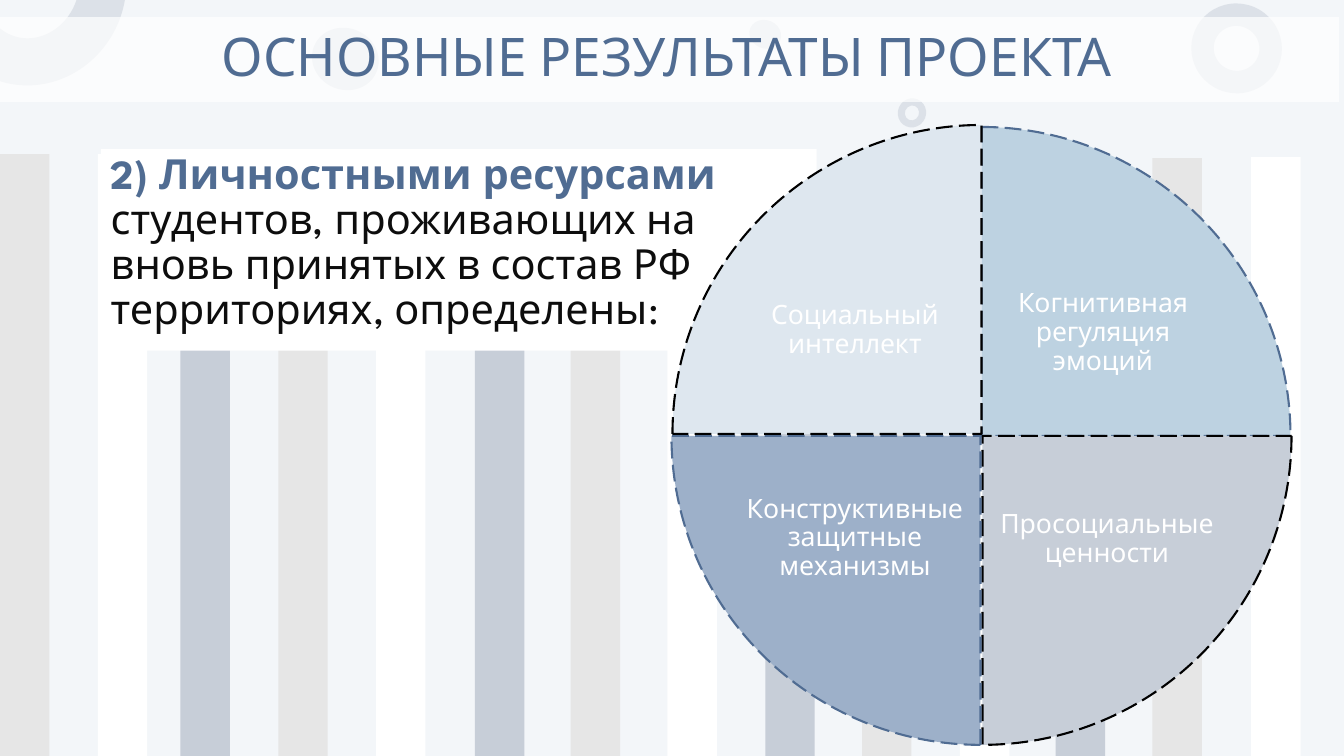
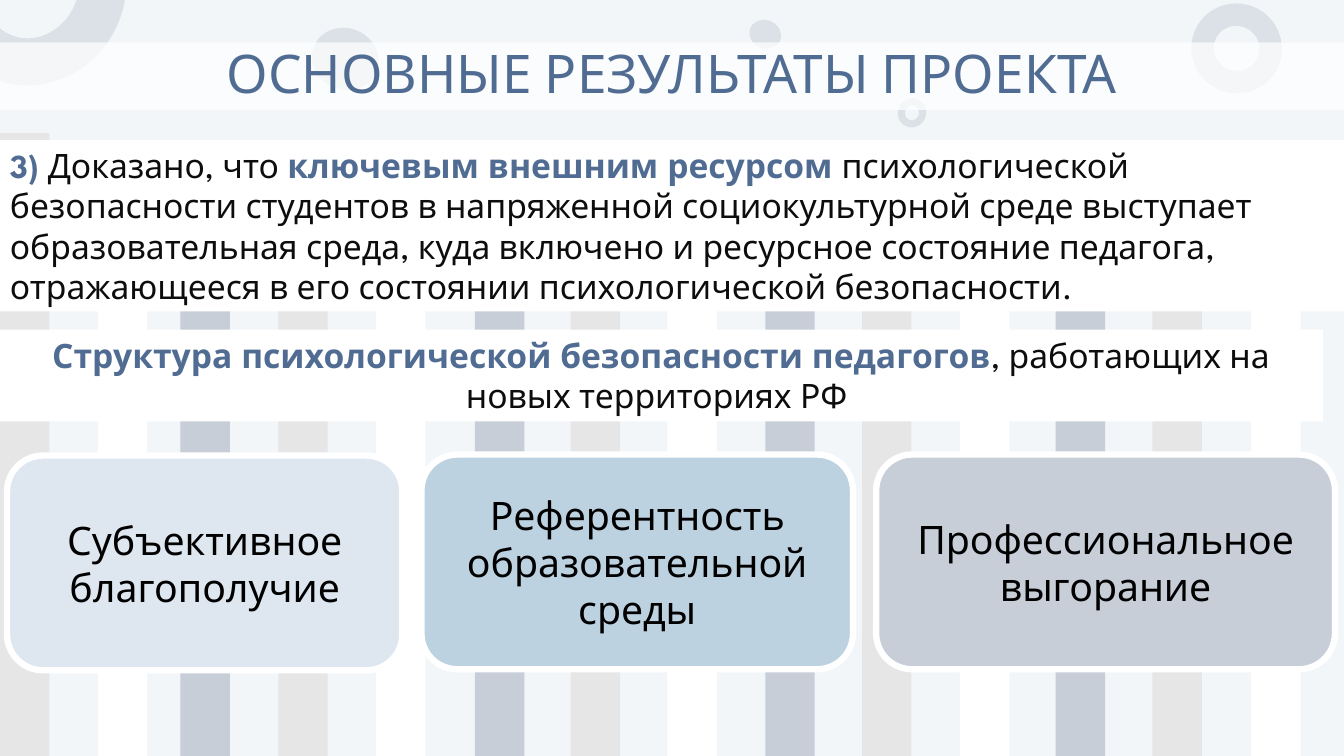
"""Build two slides on the main results of the project."""
from lxml.etree import SubElement
from pptx import Presentation
from pptx.dml.color import RGBColor
from pptx.enum.dml import MSO_LINE
from pptx.enum.shapes import MSO_SHAPE
from pptx.enum.text import MSO_ANCHOR, MSO_AUTO_SIZE, PP_ALIGN
from pptx.oxml.ns import qn
from pptx.util import Inches, Pt

COLORS = {
    "back": "F3F6F9",
    "white": "FFFFFF",
    "gray": "E6E6E6",
    "steel": "C7CED8",
    "pale": "DEE7EF",
    "sky": "BDD2E1",
    "blue": "9DB0C9",
    "accent": "506C92",
    "text": "0D0D0D",
    "black": "000000",
}
HEAD_FONT, BODY_FONT = "Karla", "League Spartan"
TITLE = "ОСНОВНЫЕ РЕЗУЛЬТАТЫ ПРОЕКТА"
WIDTH, HEIGHT = 13.33, 7.5

STRIPE_LEFTS = [0, 0.97, 1.79, 2.76, 3.73, 4.71, 5.66,
                6.62, 7.59, 8.55, 9.52, 10.47, 11.43, 12.41]
STRIPE_COLORS = ["gray", "white", "steel"]
STRIPE_WIDTH = 0.49
RINGS = [
    (MSO_SHAPE.DONUT, (11.82, 0.03, 0.89, 0.9)),
    (MSO_SHAPE.OVAL, (3.12, 0.25, 0.61, 0.67)),
    (MSO_SHAPE.DONUT, (-0.68, -1.07, 1.98, 1.87)),
    (MSO_SHAPE.OVAL, (7.45, 0.18, 0.28, 0.32)),
    (MSO_SHAPE.DONUT, (8.9, 0.98, 0.29, 0.28)),
]


def rgb(name):
    return RGBColor.from_string(COLORS[name])


class Deck:
    def __init__(self):
        self.prs = Presentation()
        self.prs.slide_width = Inches(WIDTH)
        self.prs.slide_height = Inches(HEIGHT)
        self.s = None

    def slide(self, title_box, stripe_tops):
        self.s = self.prs.slides.add_slide(self.prs.slide_layouts[5])
        fill = self.s.background.fill
        fill.solid()
        fill.fore_color.rgb = rgb("back")
        for i, (left, top) in enumerate(zip(STRIPE_LEFTS, stripe_tops)):
            color = STRIPE_COLORS[i % len(STRIPE_COLORS)]
            self.shape((left, top, STRIPE_WIDTH, HEIGHT - top), color)
        for kind, box in RINGS:
            self.shape(box, "steel", kind, alpha=51).rotation = 292.8
        self.title(title_box)

    def title(self, box):
        sp = self.s.shapes.title
        self.s.shapes.element.append(sp.element)
        sp.left, sp.top, sp.width, sp.height = map(Inches, box)
        self.paint(sp, "white", 70)
        self.set_text(sp, [(TITLE, "accent", False)], 38, font=HEAD_FONT, spacing=0.9)

    def paint(self, sp, color, alpha=None):
        sp.fill.solid()
        sp.fill.fore_color.rgb = rgb(color)
        if alpha:
            clr = sp.element.spPr.find(".//" + qn("a:srgbClr"))
            SubElement(clr, qn("a:alpha"), val=str(alpha * 1000))

    def shape(self, box, color, kind=MSO_SHAPE.RECTANGLE, line=None,
              line_width=1.5, alpha=None):
        sp = self.s.shapes.add_shape(kind, *map(Inches, box))
        sp.shadow.inherit = False
        self.paint(sp, color, alpha)
        if line:
            sp.line.color.rgb = rgb(line)
            sp.line.width = Pt(line_width)
        else:
            sp.line.fill.background()
        return sp

    def set_text(self, sp, runs, size, font=BODY_FONT, align=PP_ALIGN.CENTER,
                 anchor=MSO_ANCHOR.MIDDLE, spacing=1.0, before=0):
        tf = sp.text_frame
        tf.word_wrap = True
        tf.auto_size = MSO_AUTO_SIZE.NONE
        tf.vertical_anchor = anchor
        p = tf.paragraphs[0]
        p.alignment = align
        p.line_spacing = spacing
        p.space_before = Pt(before)
        p.font.name = font
        p.font.size = Pt(size)
        for text, color, bold in runs:
            r = p.add_run()
            r.text = text
            r.font.bold = bold
            r.font.color.rgb = rgb(color)

    def panel(self, box, runs, size, **style):
        sp = self.shape(box, "white")
        self.set_text(sp, runs, size, anchor=MSO_ANCHOR.TOP, **style)

    def sector(self, box, start, color, line):
        sp = self.shape(box, color, MSO_SHAPE.PIE, line)
        sp.line.dash_style = MSO_LINE.LONG_DASH
        sp.adjustments[0] = start
        sp.adjustments[1] = (start + 54) % 216

    def label(self, box, text):
        sp = self.s.shapes.add_textbox(*map(Inches, box))
        tf = sp.text_frame
        tf.margin_left = tf.margin_right = Inches(0.03)
        tf.margin_top = tf.margin_bottom = Inches(0.03)
        self.set_text(sp, [(text, "white", False)], 19, spacing=0.9)

    def card(self, box, text, color):
        sp = self.shape(box, color, MSO_SHAPE.ROUNDED_RECTANGLE, "white", 4.5)
        self.set_text(sp, [(text, "black", False)], 28)


def personal_resources(deck):
    deck.slide((-0.05, 0.17, WIDTH, 0.84),
               [1.53, 1.53, 1.5, 1.5, 1.5, 1.54, 1.54,
                1.57, 1.57, 1.56, 1.56, 1.56, 1.57, 1.56])
    deck.panel((1, 1.48, 7.1, 2), [
        ("2) Личностными ресурсами ", "accent", True),
        ("студентов, проживающих на вновь принятых в состав РФ "
         "территориях, определены:", "text", False),
    ], 29.6, align=PP_ALIGN.LEFT, spacing=0.9, before=10)
    sectors = [
        (6.67, 1.26, 162, "sky", "accent", 9.81, 2.39, "Когнитивная регуляция эмоций"),
        (6.68, 1.26, 0, "steel", "black", 9.85, 4.44, "Просоциальные ценности"),
        (6.66, 1.26, 54, "blue", "accent", 7.35, 4.43, "Конструктивные защитные механизмы"),
        (6.67, 1.24, 108, "pale", "black", 7.35, 2.37, "Социальный интеллект"),
    ]
    for left, top, start, color, line, text_left, text_top, text in sectors:
        deck.sector((left, top, 6.13, 6.13), start, color, line)
        deck.label((text_left, text_top, 2.26, 1.82), text)


def external_resource(deck):
    deck.slide((0, 0.42, WIDTH, 0.67),
               [1.32, 1.48, 1.46, 1.5, 1.5, 1.52, 1.54,
                1.57, 1.57, 1.67, 1.49, 1.47, 1.57, 1.67])
    deck.panel((0, 1.39, WIDTH, 1.7), [
        ("3) ", "accent", True),
        ("Доказано, что ", "text", False),
        ("ключевым внешним ресурсом ", "accent", True),
        ("психологической безопасности студентов в напряженной "
         "социокультурной среде выступает образовательная среда, куда "
         "включено и ресурсное состояние педагога, отражающееся в его "
         "состоянии психологической безопасности.", "text", False),
    ], 24, align=PP_ALIGN.LEFT, before=10)
    deck.panel((-0.01, 3.27, 13.13, 0.91), [
        ("Структура психологической безопасности педагогов", "accent", True),
        (", работающих на новых территориях РФ ", "text", False),
    ], 24)
    cards = [
        (0.07, 4.52, 3.92, "Субъективное благополучие", "pale"),
        (4.18, 4.51, 4.28, "Референтность образовательной среды", "sky"),
        (8.69, 4.51, 4.55, "Профессиональное выгорание", "steel"),
    ]
    for left, top, width, text, color in cards:
        deck.card((left, top, width, 2.13), text, color)


def main():
    deck = Deck()
    personal_resources(deck)
    external_resource(deck)
    deck.prs.save("out.pptx")


if __name__ == "__main__":
    main()
